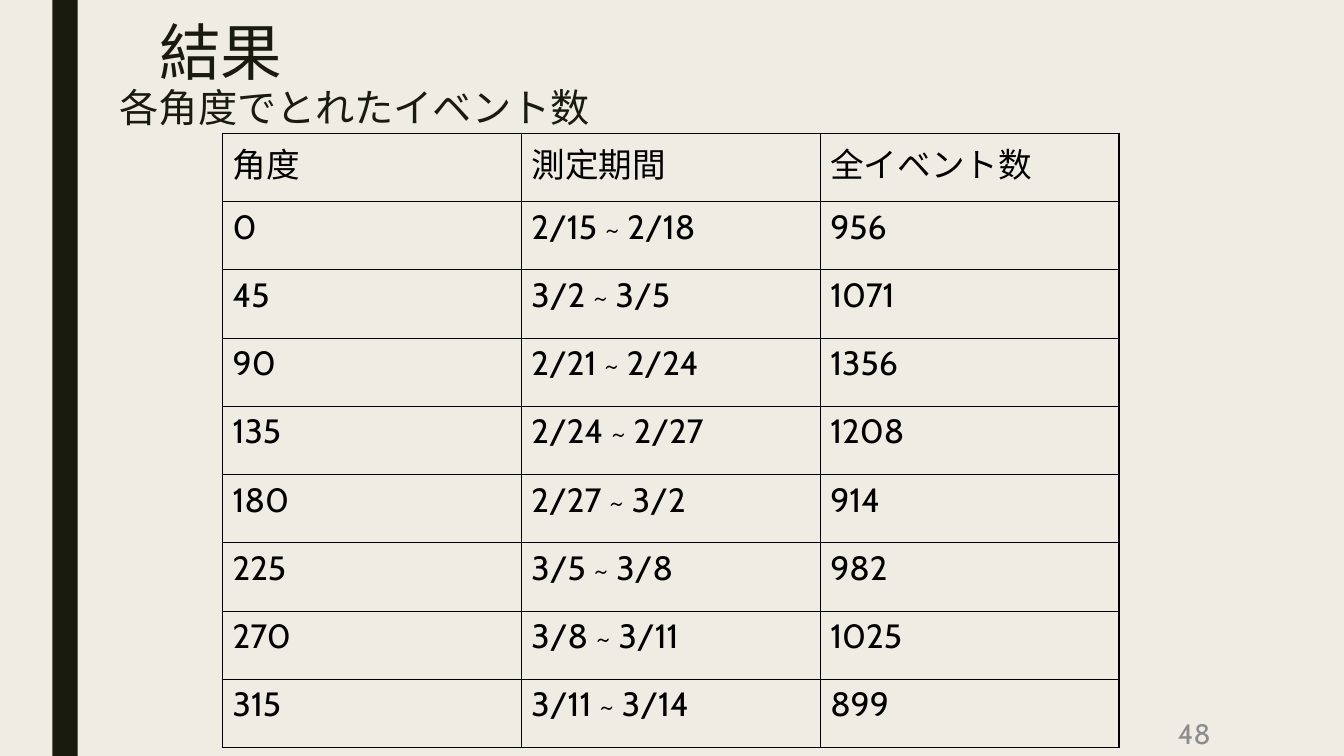
from lxml import etree
from pptx import Presentation
from pptx.dml.color import RGBColor
from pptx.enum.shapes import MSO_SHAPE
from pptx.enum.text import MSO_ANCHOR, PP_ALIGN
from pptx.oxml.ns import qn
from pptx.util import Cm, Pt

RECT = MSO_SHAPE.RECTANGLE
TOP, MIDDLE = MSO_ANCHOR.TOP, MSO_ANCHOR.MIDDLE
LEFT, RIGHT = PP_ALIGN.LEFT, PP_ALIGN.RIGHT
FONT = "Cabin"
COLORS = {"back": "EFEDE3", "dark": "191B0E", "gray": "8C8C8C", "black": "000000"}
EVENTS = [
    ("角度", "測定期間", "全イベント数"),
    ("0", "2/15 ~ 2/18", "956"),
    ("45", "3/2 ~ 3/5", "1071"),
    ("90", "2/21 ~ 2/24", "1356"),
    ("135", "2/24 ~ 2/27", "1208"),
    ("180", "2/27 ~ 3/2", "914"),
    ("225", "3/5 ~ 3/8", "982"),
    ("270", "3/8 ~ 3/11", "1025"),
    ("315", "3/11 ~ 3/14", "899"),
]
COL_WIDTH, ROW_HEIGHT = Cm(7.53), Cm(1.72)


def rgb(name):
    return RGBColor.from_string(COLORS[name])


def write(frame, text, size, color, **form):
    """Fill a text frame with one paragraph; form holds paragraph values."""
    para = frame.paragraphs[0]
    for key, value in form.items():
        setattr(para, key, value)
    run = para.add_run()
    run.text = text
    for key, value in {"name": FONT, "size": Pt(size)}.items():
        setattr(run.font, key, value)
    run.font.color.rgb = rgb(color)


def add_label(slide, box, text, size, color, anchor=TOP, **form):
    frame = slide.shapes.add_textbox(*map(Cm, box)).text_frame
    frame.word_wrap = True
    frame.vertical_anchor = anchor
    write(frame, text, size, color, **form)


def add_bar(slide, box):
    bar = slide.shapes.add_shape(RECT, *map(Cm, box))
    bar.shadow.inherit = False
    bar.fill.solid()
    bar.fill.fore_color.rgb = rgb("dark")
    bar.line.fill.background()


def add_border(cell):
    props = cell._tc.get_or_add_tcPr()
    for side in ("lnL", "lnR", "lnT", "lnB"):
        line = etree.SubElement(props, qn(f"a:{side}"), w=str(Pt(1)))
        fill = etree.SubElement(line, qn("a:solidFill"))
        etree.SubElement(fill, qn("a:srgbClr"), val=COLORS["black"])


def add_grid(slide, left, top, rows):
    count, width = len(rows), len(rows[0])
    table = slide.shapes.add_table(
        count, width, Cm(left), Cm(top), COL_WIDTH * width, ROW_HEIGHT * count
    ).table
    table.first_row = table.horz_banding = False
    for col in table.columns:
        col.width = COL_WIDTH
    for row, texts in zip(table.rows, rows):
        row.height = ROW_HEIGHT
        for cell, text in zip(row.cells, texts):
            add_border(cell)
            cell.fill.background()
            write(cell.text_frame, text, 24, "black")


def main():
    deck = Presentation()
    deck.slide_width, deck.slide_height = Cm(33.87), Cm(19.05)
    slide = deck.slides.add_slide(deck.slide_layouts[6])
    slide.background.fill.solid()
    slide.background.fill.fore_color.rgb = rgb("back")

    add_bar(slide, (1.32, 0, 0.64, 19.05))
    add_label(slide, (3.76, 0.46, 26.67, 2.08), "結果", 44, "dark",
              alignment=LEFT, line_spacing=0.89)
    add_label(slide, (2.77, 2.06, 31.1, 16.54), "各角度でとれたイベント数", 28, "dark",
              alignment=LEFT, line_spacing=0.94,
              space_before=Pt(10), space_after=Pt(2))
    add_label(slide, (26.31, 17.93, 4.45, 1.12), "48", 20, "gray",
              anchor=MIDDLE, alignment=RIGHT)
    add_grid(slide, 5.61, 3.36, EVENTS)
    deck.save("out.pptx")


if __name__ == "__main__":
    main()
